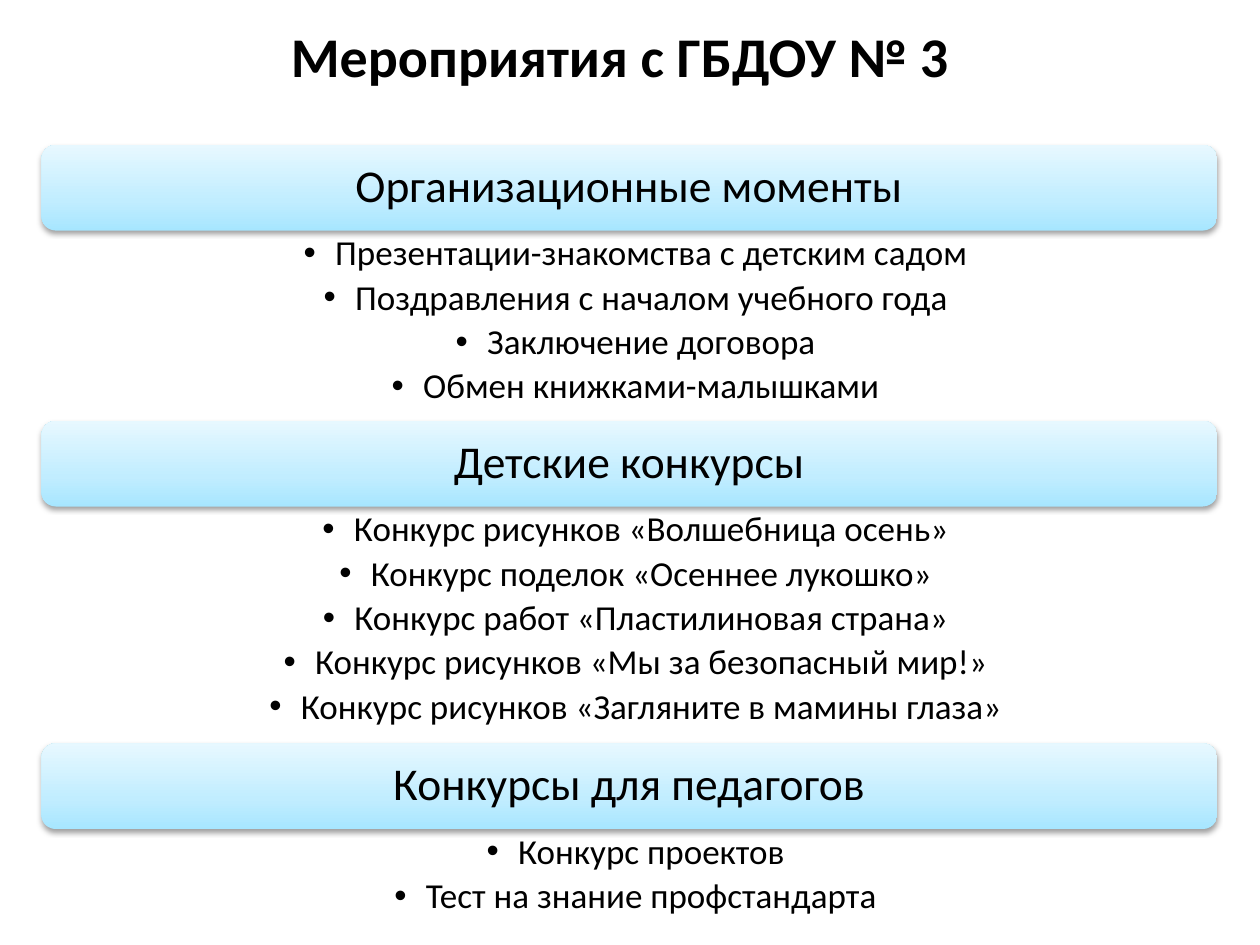
from lxml.etree import SubElement
from pptx import Presentation
from pptx.dml.color import RGBColor
from pptx.enum.shapes import MSO_SHAPE
from pptx.enum.text import MSO_ANCHOR, MSO_AUTO_SIZE, PP_ALIGN
from pptx.oxml import parse_xml
from pptx.oxml.ns import nsdecls, qn
from pptx.util import Inches, Pt

COLORS = {
    "text": "000000",
    "shadow": "000000",
    "bar_bottom": "A7E6FF",
    "bar_middle": "C1EDFF",
    "bar_top": "E7F8FF",
}
SECTIONS = [
    (1.15, 1.5, "Организационные моменты", [
        "Презентации-знакомства с детским садом",
        "Поздравления с началом учебного года",
        "Заключение договора",
        "Обмен книжками-малышками",
    ]),
    (3.34, 1.88, "Детские конкурсы", [
        "Конкурс рисунков «Волшебница осень»",
        "Конкурс поделок «Осеннее лукошко»",
        "Конкурс работ «Пластилиновая страна»",
        "Конкурс рисунков «Мы за безопасный мир!»",
        "Конкурс рисунков «Загляните в мамины глаза»",
    ]),
    (5.9, 0.77, "Конкурсы для педагогов", [
        "Конкурс проектов",
        "Тест на знание профстандарта",
    ]),
]
LEFT, WIDTH, BAR_HEIGHT = 0.33, 9.33, 0.68


def format_paragraph(paragraph, size, bold=False):
    paragraph.alignment = PP_ALIGN.CENTER
    paragraph.space_before = Pt(0)
    paragraph.font.name = "Calibri"
    paragraph.font.size = Pt(size)
    paragraph.font.bold = bold
    paragraph.font.color.rgb = RGBColor.from_string(COLORS["text"])


def style_bar(bar):
    """Give the bar a three-stop vertical gradient and a soft shadow below."""
    bar.line.fill.background()
    bar.shadow.inherit = False
    properties = bar._element.spPr
    stops = "".join(
        f'<a:gs pos="{position}"><a:srgbClr val="{COLORS[name]}"/></a:gs>'
        for position, name in [(0, "bar_bottom"), (35000, "bar_middle"), (100000, "bar_top")]
    )
    gradient = parse_xml(
        f'<a:gradFill {nsdecls("a")} rotWithShape="1"><a:gsLst>{stops}</a:gsLst>'
        '<a:lin ang="16200000" scaled="0"/></a:gradFill>'
    )
    properties.find(qn("a:prstGeom")).addnext(gradient)
    properties.find(qn("a:effectLst")).append(parse_xml(
        f'<a:outerShdw {nsdecls("a")} blurRad="40000" dist="20000" dir="5400000" rotWithShape="0">'
        f'<a:srgbClr val="{COLORS["shadow"]}"><a:alpha val="38000"/></a:srgbClr></a:outerShdw>'
    ))


deck = Presentation()
deck.slide_width, deck.slide_height = Inches(10), Inches(7.5)
# The comparison layout holds a title and four bodies; three carry the lists.
page = deck.slides.add_slide(deck.slide_layouts[4])

title = page.shapes.title
title.left, title.top, title.width, title.height = map(Inches, (0.42, 0, 9, 0.87))
title.text_frame.text = "Мероприятия с ГБДОУ № 3"
title.text_frame.vertical_anchor = MSO_ANCHOR.MIDDLE
format_paragraph(title.text_frame.paragraphs[0], 32, bold=True)

bodies = [holder for holder in page.placeholders if 1 <= holder.placeholder_format.idx <= 4]
spare = bodies.pop()
spare._element.getparent().remove(spare._element)

for body, (top, list_height, heading, items) in zip(bodies, SECTIONS):
    bar = page.shapes.add_shape(
        MSO_SHAPE.ROUNDED_RECTANGLE, Inches(LEFT), Inches(top), Inches(WIDTH), Inches(BAR_HEIGHT)
    )
    style_bar(bar)
    bar.text_frame.text = heading
    bar.text_frame.vertical_anchor = MSO_ANCHOR.MIDDLE
    heading_paragraph = bar.text_frame.paragraphs[0]
    heading_paragraph.line_spacing = 0.9
    format_paragraph(heading_paragraph, 26)

    body.left, body.top = Inches(LEFT), Inches(top + BAR_HEIGHT)
    body.width, body.height = Inches(WIDTH), Inches(list_height)
    frame = body.text_frame
    frame.text = "\n".join(items)
    frame.auto_size = MSO_AUTO_SIZE.NONE
    frame.vertical_anchor = MSO_ANCHOR.TOP
    frame.margin_left, frame.margin_right = Inches(0.3), Inches(0.2)
    frame.margin_top = frame.margin_bottom = Inches(0.04)
    for paragraph in frame.paragraphs:
        paragraph.line_spacing = 0.9
        paragraph.space_after = Pt(3.75)
        format_paragraph(paragraph, 20)
        indents = paragraph._p.get_or_add_pPr()
        indents.set("marL", str(Inches(0.25)))
        indents.set("indent", str(-Inches(0.25)))
        bullet = SubElement(indents, qn("a:buChar"), char="•")
        indents.find(qn("a:defRPr")).addprevious(bullet)

deck.save("out.pptx")
